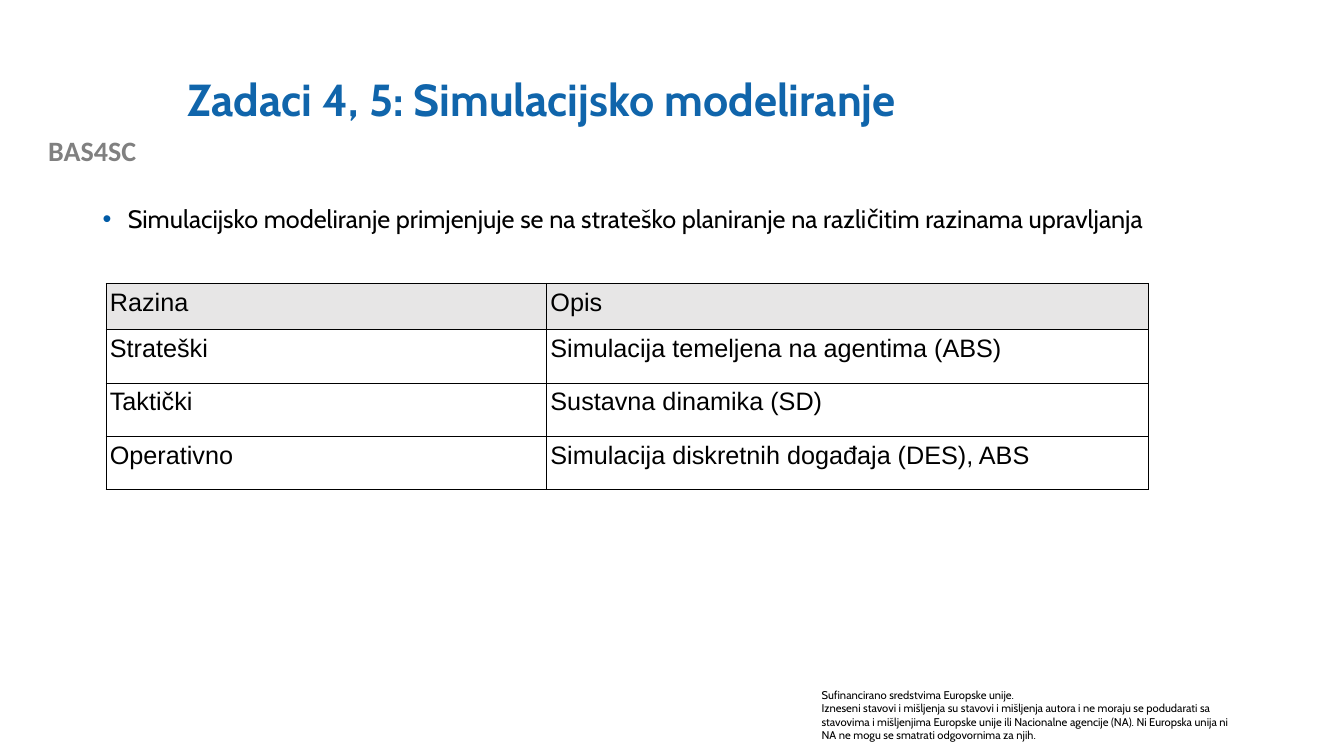
from dataclasses import dataclass

from lxml.etree import SubElement
from pptx import Presentation
from pptx.dml.color import RGBColor
from pptx.enum.text import MSO_ANCHOR, PP_ALIGN
from pptx.oxml import parse_xml
from pptx.oxml.ns import nsdecls, qn
from pptx.slide import Slide
from pptx.table import _Cell
from pptx.text.text import TextFrame, _Paragraph
from pptx.util import Inches, Pt


@dataclass(frozen=True)
class TextStyle:
    font: str
    size: float
    color: str
    bold: bool = False


@dataclass(frozen=True)
class Theme:
    title: TextStyle = TextStyle("Cabin", 32, "1065AB", True)
    body: TextStyle = TextStyle("Cabin", 18, "000000")
    project: TextStyle = TextStyle("Calibri", 20, "808080", True)
    funding: TextStyle = TextStyle("Cabin", 8, "000000")
    cell: TextStyle = TextStyle("Arial", 18, "000000")
    bullet: str = "015BA6"
    header_fill: str = "E7E6E6"
    border: str = "000000"
    border_width: float = 0.57
    line_spacing: float = 0.9


@dataclass(frozen=True)
class Box:
    left: float
    top: float
    width: float
    height: float

    def lengths(self) -> tuple[int, int, int, int]:
        return (Inches(self.left), Inches(self.top),
                Inches(self.width), Inches(self.height))


@dataclass(frozen=True)
class TextBlock:
    box: Box
    text: str
    style: TextStyle
    alignment: PP_ALIGN = PP_ALIGN.LEFT


THEME = Theme()
TITLE = TextBlock(Box(1.76, 0.4, 10.66, 1.22),
                  "Zadaci 4, 5: Simulacijsko modeliranje", THEME.title)
PROJECT = TextBlock(Box(0, 1.28, 1.83, 0.43), "BAS4SC", THEME.project,
                    PP_ALIGN.CENTER)
FUNDING = TextBlock(
    Box(8.05, 6.78, 4.37, 0.64),
    "Sufinancirano sredstvima Europske unije.\n"
    "Izneseni stavovi i mišljenja su stavovi i mišljenja autora i ne moraju se "
    "podudarati sa stavovima i mišljenjima Europske unije ili Nacionalne agencije "
    "(NA). Ni Europska unija ni NA ne mogu se smatrati odgovornima za njih.",
    THEME.funding)
STATEMENT = TextBlock(
    Box(0.92, 2, 11.5, 4.76),
    "Simulacijsko modeliranje primjenjuje se na strateško planiranje "
    "na različitim razinama upravljanja", THEME.body)

LEVELS_BOX = Box(1.05, 2.81, 10.34, 2.05)
COLUMN_WIDTHS = (4.37, 5.97)
HEADER_HEIGHT, ROW_HEIGHT = 0.46, 0.53
LEVELS = (
    ("Razina", "Opis"),
    ("Strateški", "Simulacija temeljena na agentima (ABS)"),
    ("Taktički", "Sustavna dinamika (SD)"),
    ("Operativno", "Simulacija diskretnih događaja (DES), ABS"),
)


def write_text(text_frame: TextFrame, text: str, style: TextStyle,
               alignment: PP_ALIGN = PP_ALIGN.LEFT) -> None:
    text_frame.text = text
    for paragraph in text_frame.paragraphs:
        paragraph.alignment = alignment
        for run in paragraph.runs:
            run.font.name = style.font
            run.font.size = Pt(style.size)
            run.font.bold = style.bold
            run.font.color.rgb = RGBColor.from_string(style.color)


def add_text(slide: Slide, block: TextBlock) -> TextFrame:
    text_frame = slide.shapes.add_textbox(*block.box.lengths()).text_frame
    text_frame.word_wrap = True
    write_text(text_frame, block.text, block.style, block.alignment)
    return text_frame


def place_title(slide: Slide, block: TextBlock) -> None:
    title = slide.shapes.title
    title.left, title.top, title.width, title.height = block.box.lengths()
    title.text_frame.vertical_anchor = MSO_ANCHOR.MIDDLE
    write_text(title.text_frame, block.text, block.style, block.alignment)
    title.text_frame.paragraphs[0].line_spacing = THEME.line_spacing


def add_bullet(paragraph: _Paragraph) -> None:
    paragraph.line_spacing = THEME.line_spacing
    properties = paragraph._p.get_or_add_pPr()
    properties.set("marL", str(Inches(0.25)))
    properties.set("indent", str(-Inches(0.25)))
    color = SubElement(properties, qn("a:buClr"))
    SubElement(color, qn("a:srgbClr"), val=THEME.bullet)
    SubElement(properties, qn("a:buFont"), typeface="Arial")
    SubElement(properties, qn("a:buChar"), char="•")


def add_borders(cell: _Cell) -> None:
    properties = cell._tc.get_or_add_tcPr()
    for index, side in enumerate(("lnL", "lnR", "lnT", "lnB")):
        properties.insert(index, parse_xml(
            f'<a:{side} {nsdecls("a")} w="{Pt(THEME.border_width)}">'
            f'<a:solidFill><a:srgbClr val="{THEME.border}"/></a:solidFill>'
            f'</a:{side}>'))


def format_cell(cell: _Cell, text: str, is_header: bool) -> None:
    write_text(cell.text_frame, text, THEME.cell)
    cell.margin_left = cell.margin_right = Inches(0.04)
    cell.margin_top = cell.margin_bottom = Inches(0.05)
    if is_header:
        cell.fill.solid()
        cell.fill.fore_color.rgb = RGBColor.from_string(THEME.header_fill)
    else:
        cell.fill.background()
    add_borders(cell)


def add_levels_table(slide: Slide) -> None:
    table = slide.shapes.add_table(len(LEVELS), len(COLUMN_WIDTHS),
                                   *LEVELS_BOX.lengths()).table
    table.first_row = table.horz_banding = False
    for column, width in zip(table.columns, COLUMN_WIDTHS):
        column.width = Inches(width)
    for row_index, (row, texts) in enumerate(zip(table.rows, LEVELS)):
        is_header = row_index == 0
        row.height = Inches(HEADER_HEIGHT if is_header else ROW_HEIGHT)
        for cell, text in zip(row.cells, texts):
            format_cell(cell, text, is_header)


def main() -> None:
    presentation = Presentation()
    presentation.slide_width = Inches(13.33)
    presentation.slide_height = Inches(7.5)
    slide = presentation.slides.add_slide(presentation.slide_layouts[5])
    add_text(slide, PROJECT)
    add_text(slide, FUNDING)
    place_title(slide, TITLE)
    statement = add_text(slide, STATEMENT)
    add_bullet(statement.paragraphs[0])
    add_levels_table(slide)
    presentation.save("out.pptx")


if __name__ == "__main__":
    main()
